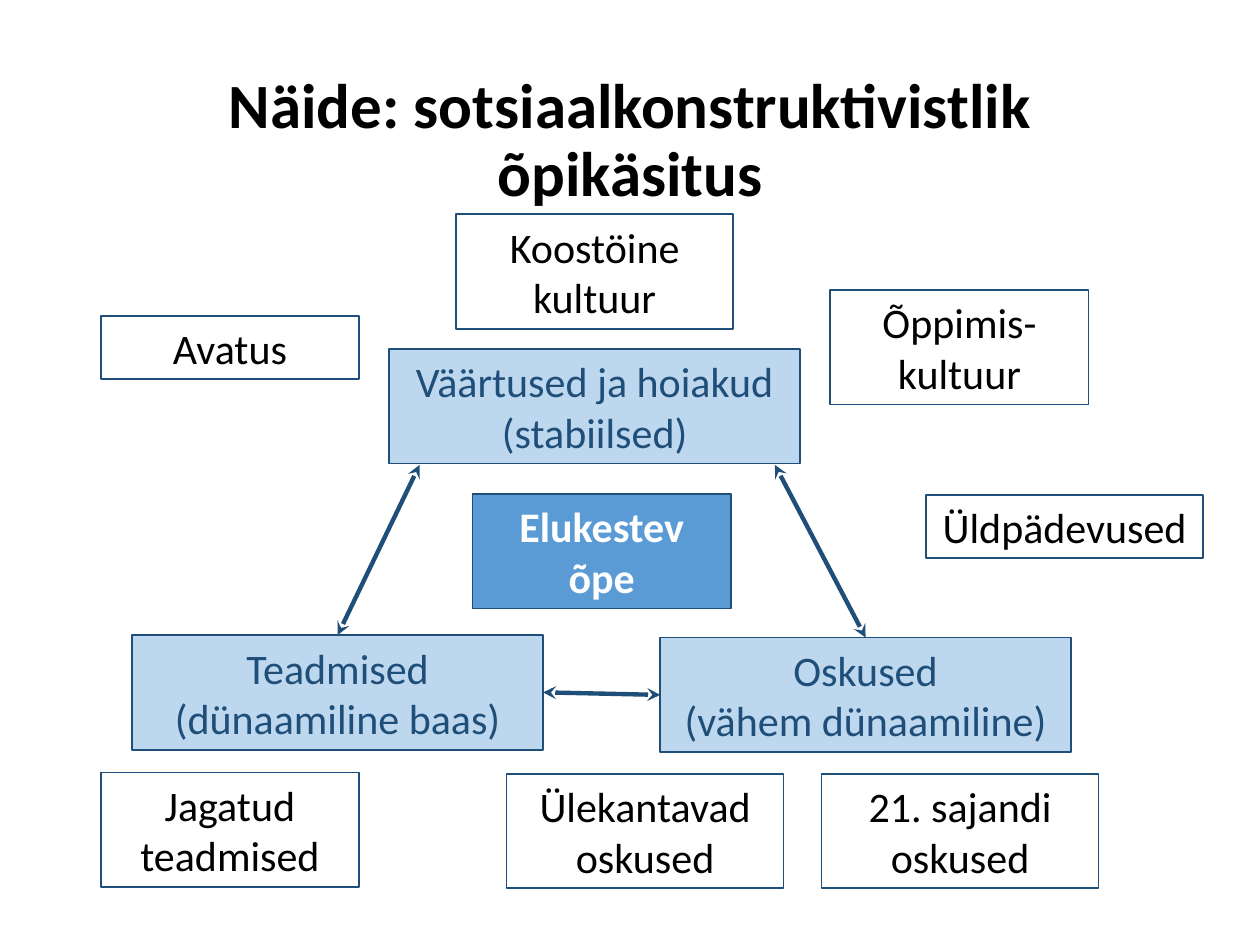
import lxml.etree
import pptx
import pptx.dml.color
import pptx.enum.shapes
import pptx.enum.text
import pptx.oxml.ns
import pptx.util

Inches = pptx.util.Inches
COLORS = {
    "black": "000000",
    "white": "FFFFFF",
    "navy": "1F4E79",
    "pale": "BDD7EE",
    "blue": "5B9BD5",
}
LEFT, TOP, RIGHT = 1, 0, 3


def rgb(name):
    return pptx.dml.color.RGBColor.from_string(COLORS[name])


def write_text(shape, text, size=24, color="black", bold=False, spacing=None):
    frame = shape.text_frame
    frame.word_wrap = True
    frame.vertical_anchor = pptx.enum.text.MSO_ANCHOR.MIDDLE
    paragraph = frame.paragraphs[0]
    paragraph.text = text
    paragraph.alignment = pptx.enum.text.PP_ALIGN.CENTER
    if spacing:
        paragraph.line_spacing = spacing
    for run in paragraph.runs:
        run.font.name = "Calibri"
        run.font.size = pptx.util.Pt(size)
        run.font.bold = bold
        run.font.color.rgb = rgb(color)


class Diagram:
    """Draws styled titles, boxes and arrows on one slide."""

    def __init__(self, slide, line_color="navy"):
        self.shapes = slide.shapes
        self.line_color = line_color

    def title(self, text, left, top, width, height):
        shape = self.shapes.add_textbox(
            Inches(left), Inches(top), Inches(width), Inches(height))
        write_text(shape, text, size=36, bold=True, spacing=0.9)

    def box(self, text, left, top, width, height=0.91, fill="white", **text_format):
        shape = self.shapes.add_shape(
            pptx.enum.shapes.MSO_SHAPE.RECTANGLE,
            Inches(left), Inches(top), Inches(width), Inches(height))
        shape.shadow.inherit = False
        shape.fill.solid()
        shape.fill.fore_color.rgb = rgb(fill)
        shape.line.color.rgb = rgb(self.line_color)
        shape.line.width = pptx.util.Pt(1)
        write_text(shape, text, **text_format)
        return shape

    def arrow(self, start, end):
        connector = self.shapes.add_connector(
            pptx.enum.shapes.MSO_CONNECTOR.STRAIGHT,
            *(Inches(value) for value in start + end))
        connector.line.color.rgb = rgb(self.line_color)
        connector.line.width = pptx.util.Pt(2.5)
        line = connector.line._get_or_add_ln()
        for tag in ("a:headEnd", "a:tailEnd"):
            lxml.etree.SubElement(line, pptx.oxml.ns.qn(tag), type="stealth")
        lxml.etree.SubElement(
            connector._element.spPr, pptx.oxml.ns.qn("a:effectLst"))
        return connector


def main():
    presentation = pptx.Presentation()
    presentation.slide_width = Inches(10)
    presentation.slide_height = Inches(7.5)
    slide = presentation.slides.add_slide(presentation.slide_layouts[6])
    diagram = Diagram(slide)

    diagram.title("Näide: sotsiaalkonstruktivistlik õpikäsitus", 0.69, 0.4, 8.62, 1.45)

    core = {"width": 3.26, "fill": "pale", "color": "navy"}
    knowledge = diagram.box("Teadmised\n(dünaamiline baas)", 1.05, 5.04, **core)
    skills = diagram.box("Oskused\n(vähem dünaamiline)", 5.24, 5.06, **core)
    diagram.box("Väärtused ja hoiakud (stabiilsed)", 3.09, 2.77, **core)
    diagram.box("Elukestev õpe", 3.75, 3.92, 2.05, fill="blue", color="white", bold=True)

    for text, left, top, width, height in (
        ("Koostöine kultuur", 3.62, 1.7, 2.2, 0.91),
        ("Õppimis-kultuur", 6.59, 2.3, 2.05, 0.91),
        ("Avatus", 0.8, 2.51, 2.05, 0.5),
        ("Üldpädevused", 7.35, 3.93, 2.2, 0.5),
        ("Jagatud teadmised", 0.8, 6.13, 2.05, 0.91),
        ("Ülekantavad oskused", 4.02, 6.14, 2.2, 0.91),
        ("21. sajandi oskused", 6.52, 6.14, 2.2, 0.91),
    ):
        diagram.box(text, left, top, width, height)

    across = diagram.arrow((4.31, 5.49), (5.24, 5.51))
    across.begin_connect(knowledge, RIGHT)
    across.end_connect(skills, LEFT)
    diagram.arrow((2.68, 5.04), (3.33, 3.69)).begin_connect(knowledge, TOP)
    diagram.arrow((6.87, 5.06), (6.15, 3.69)).begin_connect(skills, TOP)

    presentation.save("out.pptx")


if __name__ == "__main__":
    main()
